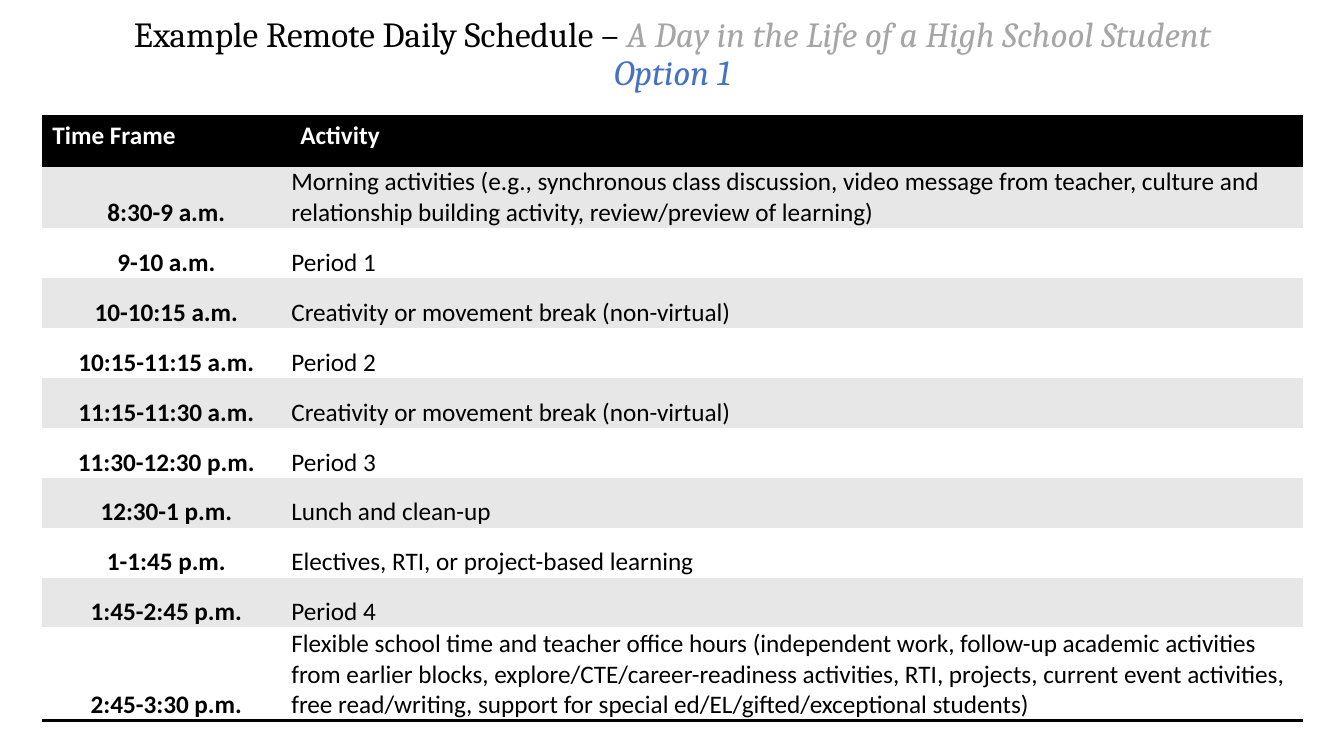
"""Build a one-slide daily schedule for remote high school students."""
from dataclasses import dataclass

from lxml import etree
from pptx import Presentation
from pptx.dml.color import RGBColor
from pptx.enum import text
from pptx.oxml import ns
from pptx.util import Inches, Pt


@dataclass(frozen=True)
class Theme:
    black: str = "000000"
    white: str = "FFFFFF"
    gray: str = "A6A6A6"
    blue: str = "4472C4"
    band: str = "E7E7E7"
    title_font: str = "Cambria"
    body_font: str = "Calibri"
    title_size: float = 25.2
    body_size: float = 18
    rule_width: float = 2
    plain_table_style: str = "{2D5ABB26-0587-4C30-8999-92F81FD0307C}"


THEME = Theme()
HEADINGS = ("Time Frame", "Activity")
BREAK = "Creativity or movement break (non-virtual)"
SCHEDULE = [
    ("8:30-9 a.m.", "Morning activities (e.g., synchronous class discussion, video message from "
     "teacher, culture and relationship building activity, review/preview of learning)"),
    ("9-10 a.m.", "Period 1"),
    ("10-10:15 a.m.", BREAK),
    ("10:15-11:15 a.m.", "Period 2"),
    ("11:15-11:30 a.m.", BREAK),
    ("11:30-12:30 p.m.", "Period 3"),
    ("12:30-1 p.m.", "Lunch and clean-up"),
    ("1-1:45 p.m.", "Electives, RTI, or project-based learning"),
    ("1:45-2:45 p.m.", "Period 4"),
    ("2:45-3:30 p.m.", "Flexible school time and teacher office hours (independent work, follow-up "
     "academic activities from earlier blocks, explore/CTE/career-readiness activities, RTI, "
     "projects, current event activities, free read/writing, support for special "
     "ed/EL/gifted/exceptional students)"),
]
COLUMN_WIDTHS = (2.46, 10.04)
ROW_HEIGHT = 0.495
TALL_ROWS = {1: 0.61, len(SCHEDULE): 0.92}


def add_text(paragraph, content, *, font=THEME.body_font, size=THEME.body_size,
             color=THEME.black, bold=False, italic=False):
    """Append a formatted run to a paragraph."""
    run = paragraph.add_run()
    run.text = content
    run.font.name = font
    run.font.size = Pt(size)
    run.font.bold = bold
    run.font.italic = italic
    run.font.color.rgb = RGBColor.from_string(color)


def add_title(slide):
    """Place and fill the title placeholder."""
    title = slide.shapes.title
    title.left, title.top = Inches(0.92), Inches(0.12)
    title.width, title.height = Inches(11.5), Inches(0.86)
    frame = title.text_frame
    frame.word_wrap = True
    frame.auto_size = text.MSO_AUTO_SIZE.NONE
    frame.vertical_anchor = text.MSO_ANCHOR.MIDDLE
    paragraph = frame.paragraphs[0]
    paragraph.alignment = text.PP_ALIGN.CENTER
    paragraph.line_spacing = 0.9
    for content, color, italic in (
        ("Example Remote Daily Schedule – ", THEME.black, False),
        ("A Day in the Life of a High School Student ", THEME.gray, True),
        ("Option 1", THEME.blue, True),
    ):
        add_text(paragraph, content, font=THEME.title_font, size=THEME.title_size,
                 color=color, italic=italic)


def add_borders(cell, *sides):
    """Draw black rules on the named sides of a cell, top before bottom."""
    properties = cell._tc.get_or_add_tcPr()
    for position, side in enumerate(sides):
        line = etree.Element(ns.qn(f"a:ln{side}"), w=str(Pt(THEME.rule_width)))
        fill = etree.SubElement(line, ns.qn("a:solidFill"))
        etree.SubElement(fill, ns.qn("a:srgbClr"), val=THEME.black)
        properties.insert(position, line)


def fill_cell(cell, content, fill, *, color=THEME.black, bold=False, centered=False):
    """Give a cell its background and text."""
    cell.fill.solid()
    cell.fill.fore_color.rgb = RGBColor.from_string(fill)
    paragraph = cell.text_frame.paragraphs[0]
    paragraph.alignment = text.PP_ALIGN.CENTER if centered else text.PP_ALIGN.LEFT
    add_text(paragraph, content, color=color, bold=bold)


def seat_at_bottom(cell):
    """Anchor cell text to the bottom with tight margins."""
    cell.vertical_anchor = text.MSO_ANCHOR.BOTTOM
    cell.margin_left = cell.margin_right = cell.margin_top = Inches(0.01)
    cell.margin_bottom = 0


def add_schedule(slide):
    """Add the schedule table with its heading and banded rows."""
    frame = slide.shapes.add_table(len(SCHEDULE) + 1, len(HEADINGS), Inches(0.42),
                                   Inches(1.15), Inches(12.5), Inches(6))
    table = frame.table
    table._tbl.tblPr.find(ns.qn("a:tableStyleId")).text = THEME.plain_table_style
    for column, width in zip(table.columns, COLUMN_WIDTHS):
        column.width = Inches(width)
    for index, row in enumerate(table.rows):
        row.height = Inches(TALL_ROWS.get(index, ROW_HEIGHT))
    for column, heading in enumerate(HEADINGS):
        cell = table.cell(0, column)
        fill_cell(cell, heading, THEME.black, color=THEME.white, bold=True)
        add_borders(cell, "T", "B")
    for index, entry in enumerate(SCHEDULE, start=1):
        fill = THEME.band if index % 2 else THEME.white
        for column, content in enumerate(entry):
            cell = table.cell(index, column)
            is_time = column == 0
            fill_cell(cell, content, fill, bold=is_time, centered=is_time)
            seat_at_bottom(cell)
            if index == len(SCHEDULE):
                add_borders(cell, "B")


def main():
    """Build and save the presentation."""
    presentation = Presentation()
    presentation.slide_width = Inches(13.33)
    presentation.slide_height = Inches(7.5)
    slide = presentation.slides.add_slide(presentation.slide_layouts[5])
    add_title(slide)
    add_schedule(slide)
    presentation.save("out.pptx")


if __name__ == "__main__":
    main()
